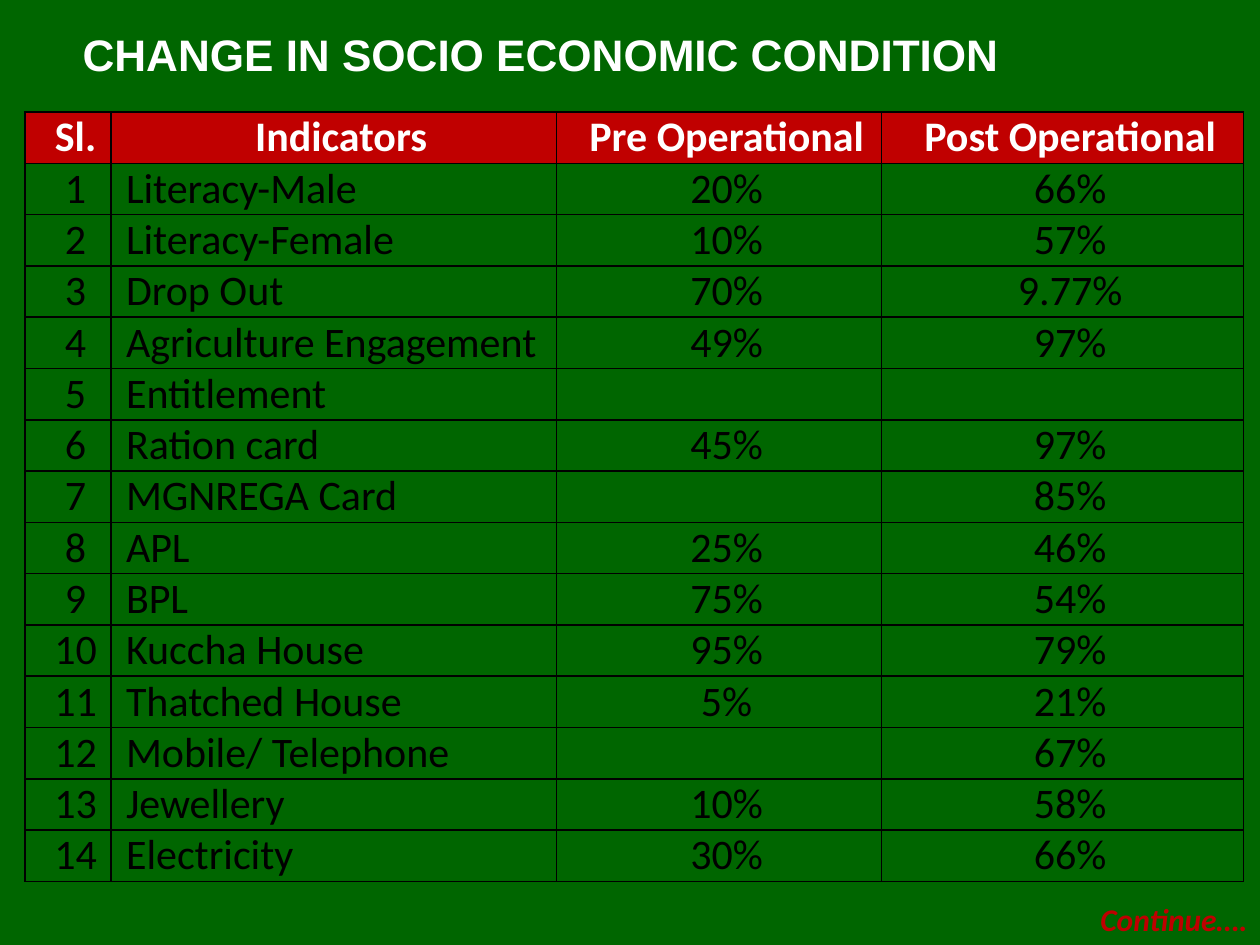
from lxml import etree
from pptx import Presentation
from pptx.dml.color import RGBColor
from pptx.enum import shapes, text
from pptx.oxml import ns
from pptx.util import Pt

COLORS = {
    "green": "006600",
    "red": "C00000",
    "white": "FFFFFF",
    "black": "000000",
}
HEADINGS = ("Sl.", "Indicators", "Pre Operational", "Post Operational")
INDICATORS = [
    ("Literacy-Male", "20%", "66%"),
    ("Literacy-Female", "10%", "57%"),
    ("Drop Out", "70%", "9.77%"),
    ("Agriculture Engagement", "49%", "97%"),
    ("Entitlement", "", ""),
    ("Ration card", "45%", "97%"),
    ("MGNREGA Card", "", "85%"),
    ("APL", "25%", "46%"),
    ("BPL", "75%", "54%"),
    ("Kuccha House", "95%", "79%"),
    ("Thatched House", "5%", "21%"),
    ("Mobile/ Telephone", "", "67%"),
    ("Jewellery", "10%", "58%"),
    ("Electricity", "30%", "66%"),
]
COLUMN_WIDTHS = (49, 254.6, 185.9, 206.7)
ROW_HEIGHT = 26.6


def rgb(name):
    return RGBColor.from_string(COLORS[name])


def fill_solid(owner, color):
    owner.fill.solid()
    owner.fill.fore_color.rgb = rgb(color)


def add_run(paragraph, words, size, color, font="Calibri", bold=False, italic=False):
    run = paragraph.add_run()
    run.text = words
    run.font.name = font
    run.font.size = Pt(size)
    run.font.color.rgb = rgb(color)
    run.font.bold = bold
    run.font.italic = italic


def add_title(slide):
    banner = slide.shapes.add_shape(
        shapes.MSO_SHAPE.RECTANGLE, Pt(0), Pt(0), Pt(720), Pt(54))
    banner.shadow.inherit = False
    fill_solid(banner, "green")
    banner.line.fill.background()
    frame = banner.text_frame
    frame.word_wrap = True
    frame.vertical_anchor = text.MSO_ANCHOR.MIDDLE
    frame.margin_left = Pt(47.2)
    frame.margin_top = Pt(10.8)
    frame.margin_bottom = Pt(3.6)
    paragraph = frame.paragraphs[0]
    paragraph.alignment = text.PP_ALIGN.LEFT
    add_run(paragraph, "CHANGE IN SOCIO ECONOMIC CONDITION", 25.2, "white",
            font="Arial", bold=True)


def add_borders(cell):
    """Draw a thin black line on all four sides, ahead of the cell's fill."""
    properties = cell._tc.get_or_add_tcPr()
    for position, side in enumerate(("lnL", "lnR", "lnT", "lnB")):
        line = etree.Element(ns.qn("a:" + side), w=str(Pt(1)))
        solid = etree.SubElement(line, ns.qn("a:solidFill"))
        etree.SubElement(solid, ns.qn("a:srgbClr"), val=COLORS["black"])
        properties.insert(position, line)


def fill_cell(cell, words, is_heading, column):
    cell.margin_left = Pt(8.64)
    cell.margin_right = cell.margin_top = cell.margin_bottom = Pt(0)
    if is_heading:
        fill_solid(cell, "red")
    elif column == 0:
        fill_solid(cell, "green")
    else:
        cell.fill.background()
    add_borders(cell)
    if words:
        paragraph = cell.text_frame.paragraphs[0]
        is_label = column == 1 and not is_heading
        paragraph.alignment = text.PP_ALIGN.LEFT if is_label else text.PP_ALIGN.CENTER
        add_run(paragraph, words, 24, "white" if is_heading else "black",
                bold=is_heading)


def add_indicator_table(slide):
    rows = [HEADINGS]
    rows += [(str(number), *values) for number, values in enumerate(INDICATORS, 1)]
    table = slide.shapes.add_table(
        len(rows), len(HEADINGS), Pt(14.4), Pt(64), Pt(sum(COLUMN_WIDTHS)),
        Pt(ROW_HEIGHT * len(rows))).table
    table.horz_banding = False
    for column, width in zip(table.columns, COLUMN_WIDTHS):
        column.width = Pt(width)
    for row_index, values in enumerate(rows):
        table.rows[row_index].height = Pt(ROW_HEIGHT)
        for column_index, words in enumerate(values):
            fill_cell(table.cell(row_index, column_index), words,
                      row_index == 0, column_index)


def add_continue_note(slide):
    note = slide.shapes.add_textbox(Pt(564), Pt(511), Pt(156), Pt(29))
    frame = note.text_frame
    frame.word_wrap = True
    frame.auto_size = text.MSO_AUTO_SIZE.SHAPE_TO_FIT_TEXT
    paragraph = frame.paragraphs[0]
    paragraph.alignment = text.PP_ALIGN.RIGHT
    add_run(paragraph, "Continue….", 18, "red", bold=True, italic=True)


def main():
    deck = Presentation()
    deck.slide_width, deck.slide_height = Pt(720), Pt(540)
    slide = deck.slides.add_slide(deck.slide_layouts[6])
    fill_solid(slide.background, "green")
    add_title(slide)
    add_indicator_table(slide)
    add_continue_note(slide)
    deck.save("out.pptx")


if __name__ == "__main__":
    main()
